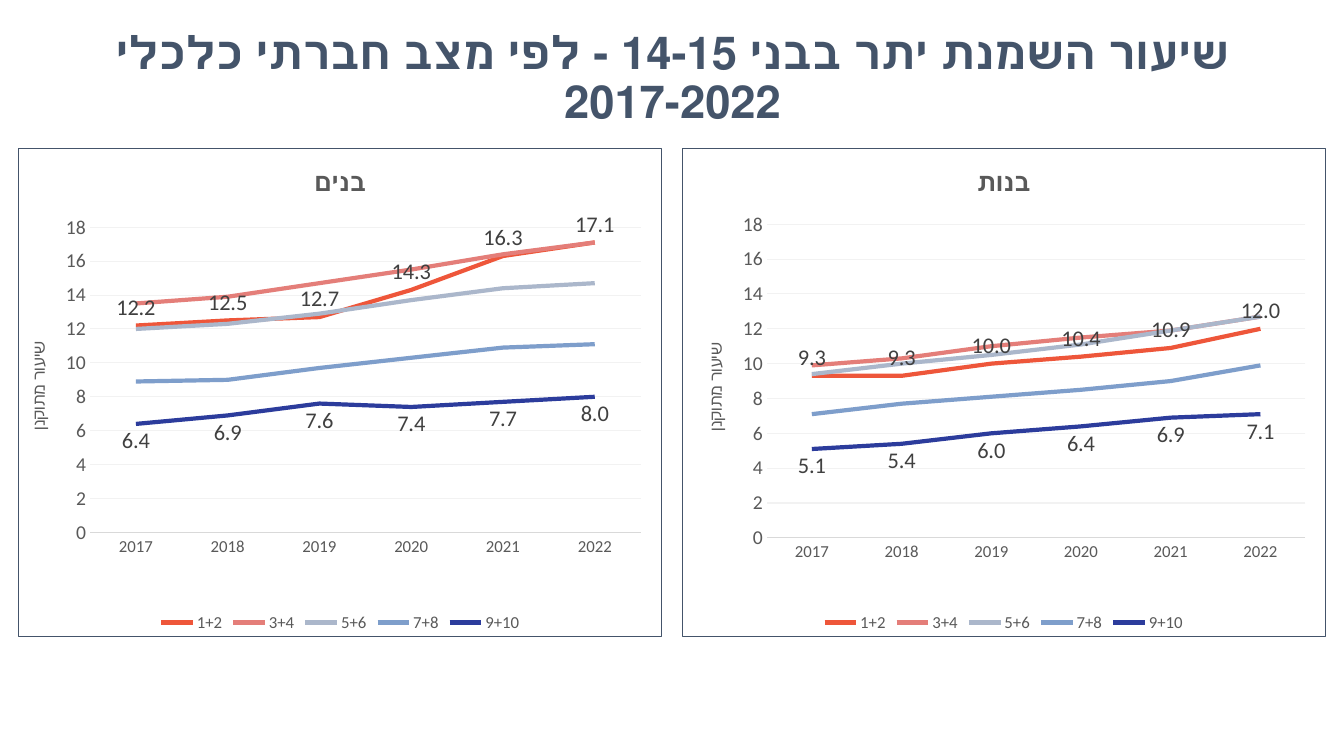
"""Build a slide comparing obesity rates of boys and girls by socioeconomic cluster."""
from dataclasses import dataclass

from lxml.etree import _Element as Element
from pptx import Presentation
from pptx.chart.chart import Chart
from pptx.chart.data import CategoryChartData
from pptx.dml.color import RGBColor
from pptx.enum.chart import XL_CHART_TYPE as ChartType
from pptx.enum.chart import XL_LABEL_POSITION as LabelPosition
from pptx.enum.chart import XL_LEGEND_POSITION as LegendPosition
from pptx.enum.chart import XL_MARKER_STYLE as MarkerStyle
from pptx.enum.chart import XL_TICK_MARK as TickMark
from pptx.enum.text import MSO_ANCHOR as Anchor
from pptx.enum.text import PP_ALIGN as Align
from pptx.oxml import parse_xml
from pptx.oxml.ns import nsdecls, qn
from pptx.util import Inches, Pt


@dataclass(frozen=True)
class Theme:
    font: str = "Calibri"
    navy: str = "44546A"
    text: str = "595959"
    label: str = "404040"
    axis: str = "D9D9D9"
    grid: str = "F2F2F2"
    heading_size: float = 32.4
    chart_title_size: float = 18
    label_size: float = 16
    scale_size: float = 14
    small_size: float = 12
    thin: float = 0.75
    thick: float = 3


@dataclass(frozen=True)
class Cluster:
    name: str
    color: str
    label_position: LabelPosition | None = None


@dataclass(frozen=True)
class Panel:
    title: str
    left: float
    plot: tuple[float, float, float, float]
    rates: tuple[tuple[float, ...], ...]


THEME = Theme()
YEARS = ("2017", "2018", "2019", "2020", "2021", "2022")
CLUSTERS = (
    Cluster("1+2", "EE563A", LabelPosition.ABOVE),
    Cluster("3+4", "E47E79"),
    Cluster("5+6", "ABB7CB"),
    Cluster("7+8", "7E9ECB"),
    Cluster("9+10", "2C3C9C", LabelPosition.BELOW),
)
PANELS = (
    Panel("בנים", 0.18, (0.111, 0.161, 0.856, 0.626), (
        (12.2, 12.5, 12.7, 14.3, 16.3, 17.1),
        (13.5, 13.9, 14.7, 15.5, 16.4, 17.1),
        (12, 12.3, 12.9, 13.7, 14.4, 14.7),
        (8.9, 9, 9.7, 10.3, 10.9, 11.1),
        (6.4, 6.9, 7.6, 7.4, 7.7, 8),
    )),
    Panel("בנות", 6.76, (0.132, 0.155, 0.837, 0.643), (
        (9.3, 9.3, 10, 10.4, 10.9, 12),
        (9.9, 10.3, 11, 11.5, 11.9, 12.7),
        (9.4, 10, 10.5, 11.1, 11.9, 12.7),
        (7.1, 7.7, 8.1, 8.5, 9, 9.9),
        (5.1, 5.4, 6, 6.4, 6.9, 7.1),
    )),
)


def style_font(font, size: float, color: str, bold: bool = False) -> None:
    font.name = THEME.font
    font.size = Pt(size)
    font.bold = bold
    font.color.rgb = RGBColor.from_string(color)


def write(frame, text: str, *, size: float, color: str, bold: bool = False) -> None:
    frame.text = text
    para = frame.paragraphs[0]
    para.alignment = Align.CENTER
    para.line_spacing = 0.9
    para._p.get_or_add_pPr().set("rtl", "1")
    for span in para.runs:
        style_font(span.font, size, color, bold)


def style_line(line, color: str, width: float) -> None:
    line.color.rgb = RGBColor.from_string(color)
    line.width = Pt(width)


def place_plot(chart: Chart, plot: tuple[float, ...]) -> None:
    area: Element = chart.element.find(".//" + qn("c:plotArea"))
    for old in area.findall(qn("c:layout")):
        area.remove(old)
    sides = "".join(f'<c:{side} val="{value}"/>' for side, value in zip("xywh", plot))
    area.insert(0, parse_xml(
        f'<c:layout {nsdecls("c")}><c:manualLayout><c:layoutTarget val="inner"/>'
        f'<c:xMode val="edge"/><c:yMode val="edge"/>{sides}</c:manualLayout></c:layout>'))


def add_border(chart: Chart) -> None:
    border = parse_xml(
        f'<c:spPr {nsdecls("c", "a")}><a:noFill/><a:ln w="{Pt(THEME.thin)}"><a:solidFill>'
        f'<a:srgbClr val="{THEME.navy}"/></a:solidFill></a:ln></c:spPr>')
    chart.element.find(qn("c:txPr")).addprevious(border)


def style_axes(chart: Chart) -> None:
    years, rates = chart.category_axis, chart.value_axis
    for axis, size in ((years, THEME.small_size), (rates, THEME.scale_size)):
        axis.major_tick_mark = axis.minor_tick_mark = TickMark.NONE
        style_font(axis.tick_labels.font, size, THEME.text)
    style_line(years.format.line, THEME.axis, THEME.thin)
    rates.format.line.fill.background()
    rates.minimum_scale, rates.maximum_scale, rates.major_unit = 0, 18, 2
    rates.tick_labels.number_format = "0"
    rates.tick_labels.number_format_is_linked = False
    style_line(rates.major_gridlines.format.line, THEME.grid, THEME.thin)
    write(rates.axis_title.text_frame, "שיעור מתוקנן", size=THEME.small_size, color=THEME.text)
    body = chart.element.find(f".//{qn('c:valAx')}/{qn('c:title')}//{qn('a:bodyPr')}")
    body.set("rot", "-5400000")
    body.set("vert", "horz")


def style_series(chart: Chart) -> None:
    for cluster, series in zip(CLUSTERS, chart.plots[0].series):
        series.smooth = False
        series.marker.style = MarkerStyle.NONE
        style_line(series.format.line, cluster.color, THEME.thick)
        if cluster.label_position is not None:
            labels = series.data_labels
            labels.show_value = True
            labels.number_format = "0.0"
            labels.number_format_is_linked = False
            labels.position = cluster.label_position
            style_font(labels.font, THEME.label_size, THEME.label)


def add_panel(page, panel: Panel) -> None:
    data = CategoryChartData(number_format="0.0")
    data.categories = YEARS
    for cluster, rates in zip(CLUSTERS, panel.rates):
        data.add_series(cluster.name, rates)
    chart = page.shapes.add_chart(
        ChartType.LINE, Inches(panel.left), Inches(1.47), Inches(6.39), Inches(4.85), data).chart
    style_font(chart.font, THEME.small_size, THEME.text)
    chart.plots[0].vary_by_categories = False
    chart.has_title = True
    write(chart.chart_title.text_frame, panel.title,
          size=THEME.chart_title_size, color=THEME.text, bold=True)
    chart.has_legend = True
    chart.legend.position = LegendPosition.BOTTOM
    chart.legend.include_in_layout = False
    style_font(chart.legend.font, THEME.small_size, THEME.text)
    style_axes(chart)
    style_series(chart)
    place_plot(chart, panel.plot)
    add_border(chart)


def main() -> None:
    deck = Presentation()
    deck.slide_width, deck.slide_height = Inches(13.33), Inches(7.5)
    page = deck.slides.add_slide(deck.slide_layouts.get_by_name("Title Only"))
    heading = page.shapes.title
    heading.left, heading.top = Inches(0.92), Inches(0.4)
    heading.width, heading.height = Inches(11.5), Inches(0.78)
    heading.text_frame.vertical_anchor = Anchor.MIDDLE
    write(heading.text_frame, "שיעור השמנת יתר בבני 14-15 - לפי מצב חברתי כלכלי\v2017-2022",
          size=THEME.heading_size, color=THEME.navy, bold=True)
    for panel in PANELS:
        add_panel(page, panel)
    deck.save("out.pptx")


if __name__ == "__main__":
    main()
